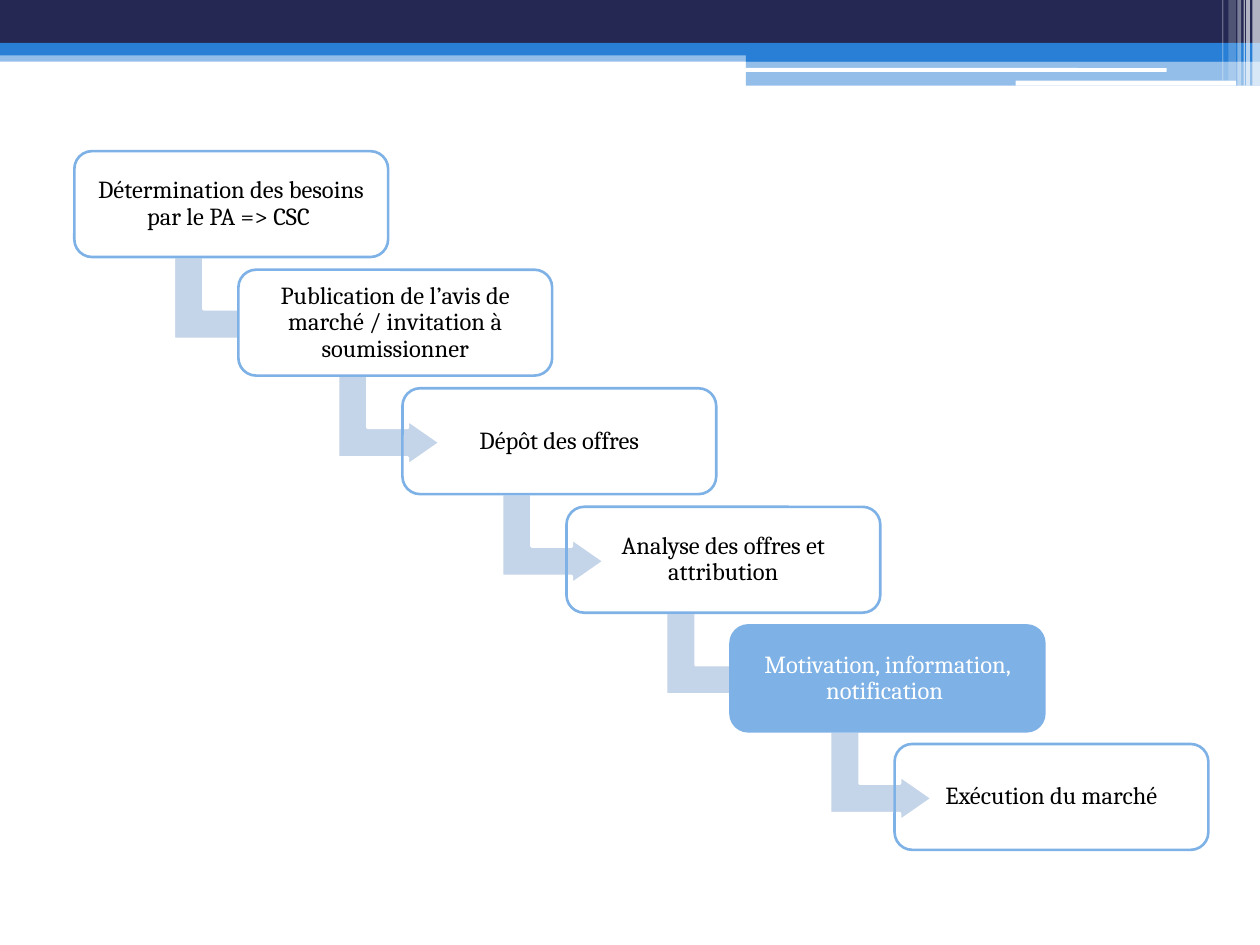
from lxml.etree import SubElement as Sub
from pptx import Presentation
from pptx.dml.color import RGBColor as RGB
from pptx.enum.shapes import MSO_SHAPE as Kind
from pptx.enum.text import MSO_ANCHOR as Anchor, PP_ALIGN as Align
from pptx.oxml.ns import qn
from pptx.util import Inches, Pt

WIDE, HIGH = Inches(10), Inches(7.5)
COLS, ROWS = 100, 75
NAVY, BLUE, SKY, PALE = "242852", "297FD5", "7EB2E6", "C5D5E9"
WHITE, BLACK = "FFFFFF", "000000"

BANDS = [
    (0, 4, 100, 0.9, BLUE, 50),
    (0, 0, 100, 3.4, NAVY, 100),
    (0, 3.4, 100, 1, BLUE, 100),
    (59.2, 3.9, 40.8, 1, BLUE, 100),
    (59.2, 4.8, 40.8, 2, BLUE, 50),
]
SLOTS = [(59.1, 5.4, 33.5, 0.3), (80.6, 6.4, 17.5, 0.4)]
RAYS = [
    (99.4, 0.6, 6.8, 65),
    (98.9, 0.3, 6.8, 65),
    (98.7, 0.1, 6.8, 60),
    (98.2, 0.3, 6.8, 40),
    (97.5, 0.6, 6.4, 20),
    (97, 0.1, 6.4, 30),
]
STEPS = [
    ("Détermination des besoins par le PA => CSC ", None, BLACK),
    ("Publication de l’avis de marché / invitation à soumissionner", WHITE, BLACK),
    ("Dépôt des offres", None, BLACK),
    ("Analyse des offres et attribution", None, BLACK),
    ("Motivation, information, notification ", SKY, WHITE),
    ("Exécution du marché", None, BLACK),
]


def hue(code):
    return RGB.from_string(code)


def apply(obj, form):
    for name, value in form.items():
        setattr(obj, name, value)


class Deck:
    font = {"name": "Cambria", "size": Pt(14)}
    para = {"alignment": Align.CENTER, "line_spacing": 0.9}
    frame = {
        "word_wrap": True,
        "vertical_anchor": Anchor.MIDDLE,
        **{f"margin_{side}": Inches(0.06) for side in ("left", "right", "top", "bottom")},
    }

    def __init__(self):
        self.show = Presentation()
        apply(self.show, {"slide_width": WIDE, "slide_height": HIGH})
        self.page = self.show.slides.add_slide(self.show.slide_layouts[6])

    def shape(self, kind, x, y, w, h, fill=None, line=None, alpha=100):
        col, row = WIDE / COLS, HIGH / ROWS
        item = self.page.shapes.add_shape(
            kind, round(x * col), round(y * row), round(w * col), round(h * row))
        item.shadow.inherit = False
        if fill:
            item.fill.solid()
            item.fill.fore_color.rgb = hue(fill)
            if alpha < 100:
                tint = item.fill._xPr.find(qn("a:solidFill"))[0]
                Sub(tint, qn("a:alpha"), val=str(alpha * 1000))
        else:
            item.fill.background()
        if line:
            item.line.color.rgb = hue(line)
            item.line.width = Pt(1.5)
        else:
            item.line.fill.background()
        return item

    def bar(self, x, y, w, h, fill, alpha=100):
        return self.shape(Kind.RECTANGLE, x, y, w, h, fill, alpha=alpha)

    def slot(self, x, y, w, h):
        return self.shape(Kind.ROUNDED_RECTANGLE, x, y, w, h, WHITE)

    def bend(self, x, y):
        item = self.shape(Kind.BENT_UP_ARROW, x, y, 7.1, 8.1, PALE, WHITE)
        item.rotation = 90
        for i, value in enumerate((0.33, 0.25, 0.36)):
            item.adjustments[i] = value

    def box(self, x, y, text, fill, ink):
        item = self.shape(Kind.ROUNDED_RECTANGLE, x, y, 24.9, 8.4, fill, SKY)
        body = item.text_frame
        apply(body, self.frame)
        para = body.paragraphs[0]
        apply(para, self.para)
        run = para.add_run()
        run.text = text
        apply(run.font, self.font)
        run.font.color.rgb = hue(ink)

    def save(self):
        self.show.save("out.pptx")


def main():
    deck = Deck()
    for band in BANDS:
        deck.bar(*band)
    for slot in SLOTS:
        deck.slot(*slot)
    for x, w, h, alpha in RAYS:
        deck.bar(x, 0, w, h, WHITE, alpha)
    for i, step in enumerate(STEPS):
        x, y = 5.9 + 13.02 * i, 12 + 9.41 * i
        if i < len(STEPS) - 1:
            deck.bend(x + 8.4, y + 7.9)
        deck.box(x, y, *step)
    deck.save()


if __name__ == "__main__":
    main()
